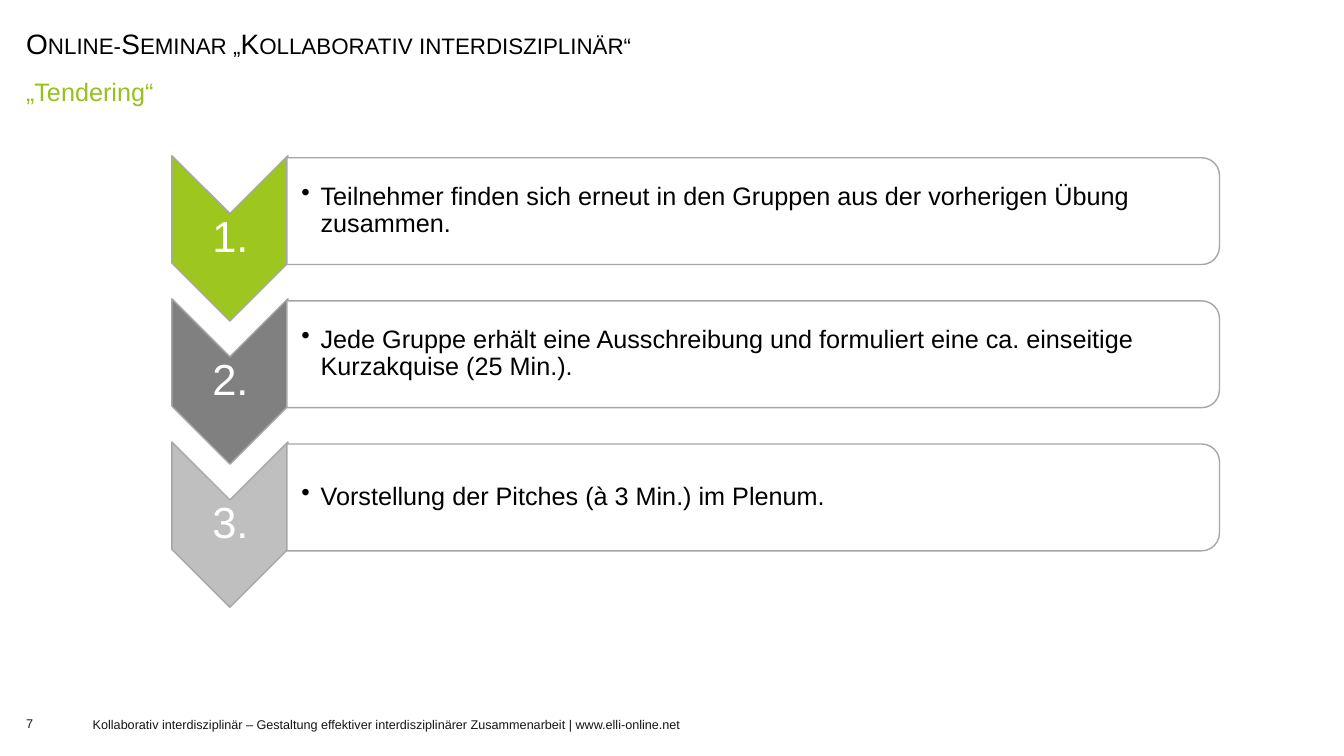
from dataclasses import dataclass

from lxml.etree import SubElement
from pptx import Presentation
from pptx.dml.color import RGBColor
from pptx.enum.shapes import MSO_SHAPE
from pptx.enum.text import MSO_ANCHOR, PP_ALIGN
from pptx.oxml.ns import qn
from pptx.util import Pt

PX = 9144
ROW_PITCH = 142


@dataclass(frozen=True)
class Theme:
    """Colours, font and type sizes of the slide."""
    font: str = "Arial"
    black: str = "000000"
    white: str = "FFFFFF"
    footer: str = "141616"
    accent: str = "98C01C"
    border: str = "A6A6A6"
    title_size: int = 20
    body_size: int = 18
    number_size: int = 31
    footer_size: int = 9


THEME = Theme()
STEPS = [
    ("9DC61E", "Teilnehmer finden sich erneut in den Gruppen aus der vorherigen Übung zusammen."),
    ("808080", "Jede Gruppe erhält eine Ausschreibung und formuliert eine ca. einseitige "
               "Kurzakquise (25 Min.)."),
    ("BFBFBF", "Vorstellung der Pitches (à 3 Min.) im Plenum."),
]


def box(left, top, width, height):
    """Turn a px box into EMU."""
    return [v * PX for v in (left, top, width, height)]


def write(sp, text, size, color, align=PP_ALIGN.LEFT, anchor=MSO_ANCHOR.MIDDLE,
          insets=(0, 0, 0, 0), spacing=1.0, small_caps=False, bullet_indent=0):
    """Fill a shape with one formatted paragraph."""
    tf = sp.text_frame
    tf.word_wrap = True
    tf.vertical_anchor = anchor
    tf.margin_left, tf.margin_top, tf.margin_right, tf.margin_bottom = box(*insets)
    p = tf.paragraphs[0]
    if bullet_indent:
        pPr = p._p.get_or_add_pPr()
        pPr.set("marL", str(bullet_indent * PX))
        pPr.set("indent", str(-bullet_indent * PX))
        SubElement(pPr, qn("a:buChar"), char="•")
    p.alignment = align
    p.line_spacing = spacing
    r = p.add_run()
    r.text = text
    r.font.name = THEME.font
    r.font.size = Pt(size)
    r.font.color.rgb = RGBColor.from_string(color)
    if small_caps:
        r.font._element.set("cap", "small")


def add_text(s, place, text, size, color, **fmt):
    """Add a text box."""
    write(s.shapes.add_textbox(*box(*place)), text, size, color, **fmt)


def add_turned_shape(s, kind, place, fill):
    """Add an outlined preset shape turned by a quarter."""
    sp = s.shapes.add_shape(kind, *box(*place))
    sp.rotation = 90
    sp.shadow.inherit = False
    sp.fill.solid()
    sp.fill.fore_color.rgb = RGBColor.from_string(fill)
    sp.line.color.rgb = RGBColor.from_string(THEME.border)
    sp.line.width = Pt(1)


def add_step(s, index, color, text):
    """Add one numbered chevron with its text panel."""
    dy = index * ROW_PITCH
    add_turned_shape(s, MSO_SHAPE.CHEVRON, (146, 179 + dy, 164, 115), color)
    add_text(s, (171, 212 + dy, 115, 49), f"{index + 1}.", THEME.number_size, THEME.white,
             align=PP_ALIGN.CENTER, insets=(2, 2, 2, 2), spacing=0.9)
    add_turned_shape(s, MSO_SHAPE.ROUND_2_SAME_RECTANGLE, (694, -253 + dy, 106, 925), THEME.white)
    add_text(s, (285, 161 + dy, 920, 96), text, THEME.body_size, THEME.black,
             insets=(14, 1, 1, 1), spacing=0.9, bullet_indent=19)


def main():
    """Build and save the slide."""
    prs = Presentation()
    prs.slide_width, prs.slide_height = 1333 * PX, 750 * PX
    s = prs.slides.add_slide(prs.slide_layouts[5])
    title = s.shapes.title
    title.left, title.top, title.width, title.height = box(16, 22, 937, 39)
    write(title, "Online-Seminar „Kollaborativ interdisziplinär“", THEME.title_size,
          THEME.black, insets=(10, 5, 10, 5), spacing=1.1, small_caps=True)
    add_text(s, (16, 68, 1302, 39), "„Tendering“", THEME.body_size, THEME.accent,
             anchor=MSO_ANCHOR.TOP, insets=(10, 5, 10, 5), spacing=1.1)
    for index, (color, text) in enumerate(STEPS):
        add_step(s, index, color, text)
    add_text(s, (26, 699, 50, 38), "7", THEME.footer_size, THEME.footer)
    add_text(s, (92, 700, 843, 37),
             "Kollaborativ interdisziplinär – Gestaltung effektiver interdisziplinärer "
             "Zusammenarbeit | www.elli-online.net", THEME.footer_size, THEME.footer)
    prs.save("out.pptx")


if __name__ == "__main__":
    main()
